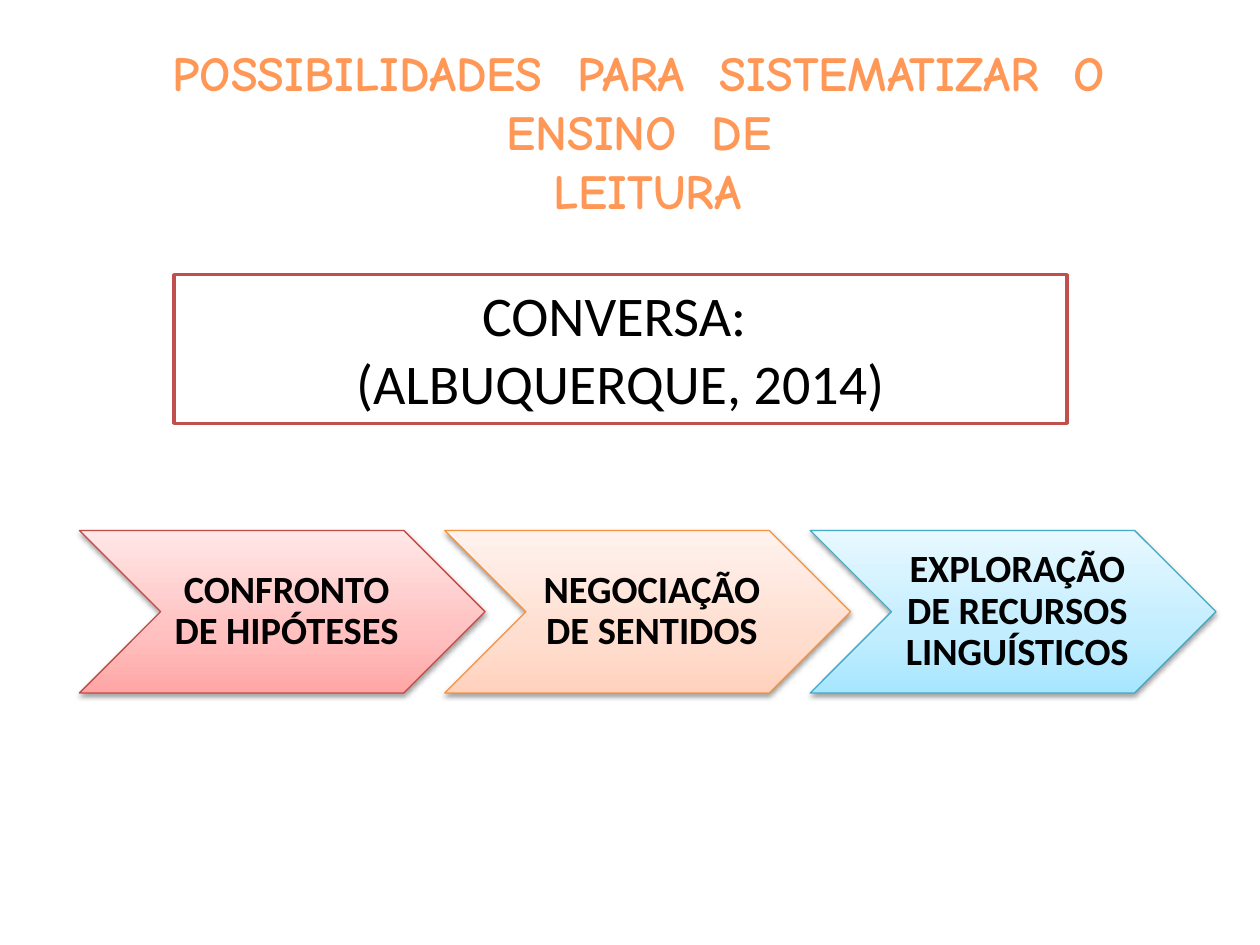
import copy
from dataclasses import dataclass

import pptx
import pptx.dml.color
import pptx.enum.shapes
import pptx.enum.text
import pptx.oxml
import pptx.oxml.ns
import pptx.util
from pptx.dml.color import RGBColor
from pptx.util import Inches, Pt

TITLE_ORANGE = RGBColor(0xFF, 0x98, 0x56)
BOX_RED = RGBColor(0xC0, 0x50, 0x4D)
BLACK = RGBColor(0, 0, 0)
WHITE = RGBColor(0xFF, 0xFF, 0xFF)

STEP_LEFT, STEP_TOP, STEP_PITCH = 0.63, 4.21, 2.9
STEP_WIDTH, STEP_HEIGHT = 3.22, 1.29
LABEL_INDENT = STEP_HEIGHT / 2
LABEL_WIDTH = STEP_WIDTH - STEP_HEIGHT
GRADIENT_POSITIONS = (0, 0.35, 1)

SHADOW_XML = (
    '<a:outerShdw xmlns:a="http://schemas.openxmlformats.org/drawingml/2006/main"'
    f' blurRad="{Pt(3.1)}" dist="{Pt(1.6)}" dir="5400000" rotWithShape="0">'
    '<a:srgbClr val="000000"><a:alpha val="38000"/></a:srgbClr></a:outerShdw>'
)


@dataclass(frozen=True)
class Step:
    label: str
    outline: RGBColor
    shades: tuple[RGBColor, RGBColor, RGBColor]


STEPS = (
    Step("CONFRONTO DE HIPÓTESES", RGBColor(0xBF, 0x4C, 0x48),
         (RGBColor(0xFF, 0xA6, 0xA5), RGBColor(0xFF, 0xC0, 0xBF), RGBColor(0xFF, 0xE7, 0xE7))),
    Step("NEGOCIAÇÃO DE SENTIDOS", RGBColor(0xF6, 0x92, 0x40),
         (RGBColor(0xFF, 0xD2, 0xBD), RGBColor(0xFF, 0xDE, 0xD0), RGBColor(0xFF, 0xF2, 0xED))),
    Step("EXPLORAÇÃO DE RECURSOS LINGUÍSTICOS", RGBColor(0x46, 0xAA, 0xC5),
         (RGBColor(0xA7, 0xE6, 0xFF), RGBColor(0xC1, 0xED, 0xFF), RGBColor(0xE7, 0xF8, 0xFF))),
)


def write_centred(frame, text: str, font_name: str, size: float,
                  color: RGBColor, bold: bool = False) -> None:
    frame.word_wrap = True
    frame.text = text
    for paragraph in frame.paragraphs:
        paragraph.alignment = pptx.enum.text.PP_ALIGN.CENTER
        for run in paragraph.runs:
            run.font.name = font_name
            run.font.size = Pt(size)
            run.font.bold = bold
            run.font.color.rgb = color


def fill_upward(shape, shades: tuple[RGBColor, ...]) -> None:
    """Fill with a three-stop gradient running from bottom to top."""
    shape.fill.gradient()
    shape.fill.gradient_angle = 90
    stop_list = shape.element.spPr.find(".//" + pptx.oxml.ns.qn("a:gsLst"))
    stop_list.append(copy.deepcopy(stop_list[-1]))
    for stop, position, shade in zip(shape.fill.gradient_stops, GRADIENT_POSITIONS, shades):
        stop.position = position
        stop.color.rgb = shade


def add_shadow(shape) -> None:
    shape.shadow.inherit = False
    effects = shape.element.spPr.find(pptx.oxml.ns.qn("a:effectLst"))
    effects.append(pptx.oxml.parse_xml(SHADOW_XML))


def add_step(shapes, step: Step, left: float) -> None:
    chevron = shapes.add_shape(
        pptx.enum.shapes.MSO_SHAPE.CHEVRON,
        Inches(left), Inches(STEP_TOP), Inches(STEP_WIDTH), Inches(STEP_HEIGHT))
    fill_upward(chevron, step.shades)
    chevron.line.color.rgb = step.outline
    chevron.line.width = Pt(0.75)
    add_shadow(chevron)

    label = shapes.add_textbox(
        Inches(left + LABEL_INDENT), Inches(STEP_TOP), Inches(LABEL_WIDTH), Inches(STEP_HEIGHT))
    frame = label.text_frame
    write_centred(frame, step.label, "Calibri", 22, BLACK, bold=True)
    frame.vertical_anchor = pptx.enum.text.MSO_ANCHOR.MIDDLE
    frame.margin_left = Inches(0.1)
    frame.margin_top = frame.margin_right = frame.margin_bottom = Inches(0.03)
    frame.paragraphs[0].line_spacing = 0.9


def add_title(shapes) -> None:
    title = shapes.add_textbox(Inches(0.75), Inches(0.29), Inches(8.78), Inches(1.51))
    write_centred(title.text_frame,
                  "POSSIBILIDADES  PARA  SISTEMATIZAR  O  ENSINO  DE \nLEITURA",
                  "Comic Neue", 28, TITLE_ORANGE, bold=True)


def add_conversation_box(shapes) -> None:
    box = shapes.add_shape(pptx.enum.shapes.MSO_SHAPE.RECTANGLE,
                           Inches(1.38), Inches(2.18), Inches(7.09), Inches(1.18))
    box.shadow.inherit = False
    box.fill.solid()
    box.fill.fore_color.rgb = WHITE
    box.line.color.rgb = BOX_RED
    box.line.width = Pt(2)
    write_centred(box.text_frame, "CONVERSA: \n(ALBUQUERQUE, 2014)", "Calibri", 32, BLACK)
    box.text_frame.vertical_anchor = pptx.enum.text.MSO_ANCHOR.TOP


def main() -> None:
    presentation = pptx.Presentation()
    presentation.slide_width = Inches(10)
    presentation.slide_height = Inches(7.5)
    slide = presentation.slides.add_slide(presentation.slide_layouts[6])

    add_title(slide.shapes)
    process = slide.shapes.add_group_shape()
    for index, step in enumerate(STEPS):
        add_step(process.shapes, step, STEP_LEFT + index * STEP_PITCH)
    add_conversation_box(slide.shapes)

    presentation.save("out.pptx")


if __name__ == "__main__":
    main()
